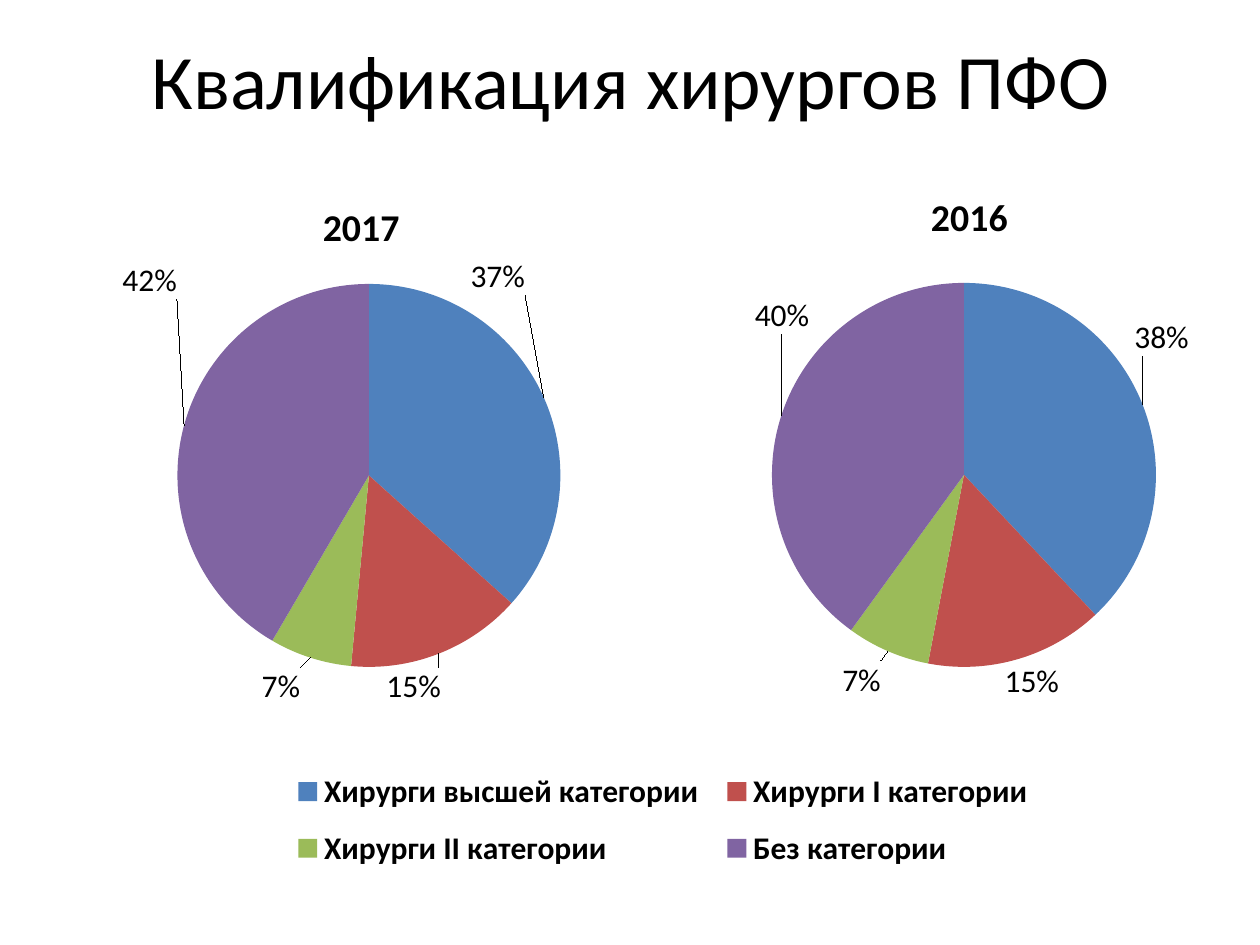
from lxml.etree import SubElement, Element
from pptx import Presentation
from pptx.chart.data import CategoryChartData
from pptx.dml.color import RGBColor
from pptx.enum.chart import XL_CHART_TYPE as ChartType, XL_LABEL_POSITION as LabelPos
from pptx.enum.chart import XL_LEGEND_POSITION as LegendPos
from pptx.enum.text import MSO_ANCHOR, PP_ALIGN
from pptx.oxml.ns import qn
from pptx.util import Pt

PX = 914400 / 126
FONT = "Calibri"
BLACK = RGBColor(0x00, 0x00, 0x00)
SLICES = [RGBColor(0x4F, 0x81, 0xBD), RGBColor(0xC0, 0x50, 0x4D),
          RGBColor(0x9B, 0xBB, 0x59), RGBColor(0x80, 0x64, 0xA2)]

TITLE = "Квалификация хирургов ПФО"
TITLE_BOX = (64, 0, 1134, 158)
CATEGORIES = ["Хирурги высшей категории", "Хирурги I категории",
              "Хирурги II категории", "Без категории"]
PIES = [
    dict(year="2017", cats=CATEGORIES, values=[37, 15, 7, 42],
         box=(25, 125, 1022, 774), plot=(95, 284, 548, 383),
         title=(316, 193), legend=(280, 754, 766, 132),
         shifts=[(-80, -99), (-55, 7), (-8, 3), (0, -124)]),
    dict(year="2016", cats=["1", "2", "3", "4"], values=[38, 15, 7, 40],
         box=(679, 165, 581, 564), plot=(771, 283, 386, 384),
         title=None, legend=None,
         shifts=[(-15, -45), (-15, -4), (-4, 3), (35, -79)]),
]


def emu(box):
    return [round(v * PX) for v in box]


def set_font(font, size, bold=False):
    font.name, font.size, font.bold = FONT, Pt(size), bold
    font.color.rgb = BLACK


def set_layout(parent, index, values, inner=False, edge=True):
    for old in parent.findall(qn("c:layout")):
        parent.remove(old)
    layout = Element(qn("c:layout"))
    manual = SubElement(layout, qn("c:manualLayout"))
    if inner:
        SubElement(manual, qn("c:layoutTarget"), val="inner")
    if edge:
        for mode in ("xMode", "yMode"):
            SubElement(manual, qn("c:" + mode), val="edge")
    for key, value in zip("xywh", values):
        SubElement(manual, qn("c:" + key), val=f"{value:.4f}")
    parent.insert(index, layout)


def add_pie(s, pie):
    left, top, width, height = pie["box"]

    def share(area):
        x, y, *size = area
        return [(x - left) / width, (y - top) / height,
                *(v / total for v, total in zip(size, (width, height)))]

    data = CategoryChartData()
    data.categories = pie["cats"]
    data.add_series(pie["year"], pie["values"])
    chart = s.shapes.add_chart(ChartType.PIE, *emu(pie["box"]), data).chart
    set_font(chart.font, 18)

    chart.has_title = True
    p = chart.chart_title.text_frame.paragraphs[0]
    p.text = pie["year"]
    set_font(p.font, 21.6, True)
    if pie["title"]:
        set_layout(chart.chart_title._element, 1, share(pie["title"]))

    chart.has_legend = bool(pie["legend"])
    if pie["legend"]:
        chart.legend.position = LegendPos.RIGHT
        chart.legend.include_in_layout = False
        set_font(chart.legend.font, 18, True)
        set_layout(chart.legend._element, 1, share(pie["legend"]))

    plot = chart.plots[0]
    plot.vary_by_categories = True
    set_layout(plot._element.getparent(), 0, share(pie["plot"]), inner=True)

    series = plot.series[0]
    labels = series.data_labels
    labels.show_percentage, labels.show_value = True, False
    labels.number_format, labels.number_format_is_linked = "0%", False
    labels.position = LabelPos.OUTSIDE_END
    set_font(labels.font, 18)
    for i, (color, (dx, dy)) in enumerate(zip(SLICES, pie["shifts"])):
        point = series.points[i]
        point.format.fill.solid()
        point.format.fill.fore_color.rgb = color
        set_font(point.data_label.font, 18)
        point.data_label.position = LabelPos.OUTSIDE_END
        label = labels._element.findall(qn("c:dLbl"))[i]
        label.find(qn("c:showVal")).set("val", "0")
        label.find(qn("c:showPercent")).set("val", "1")
        set_layout(label, 1, (dx / width, dy / height), edge=False)


prs = Presentation()
prs.slide_width, prs.slide_height = emu((1260, 945))
s = prs.slides.add_slide(prs.slide_layouts[5])

title = s.shapes.title
title.left, title.top, title.width, title.height = emu(TITLE_BOX)
tf = title.text_frame
tf.text = TITLE
tf.vertical_anchor = MSO_ANCHOR.MIDDLE
tf.paragraphs[0].alignment = PP_ALIGN.CENTER
set_font(tf.paragraphs[0].font, 44)

for pie in PIES:
    add_pie(s, pie)

prs.save("out.pptx")
